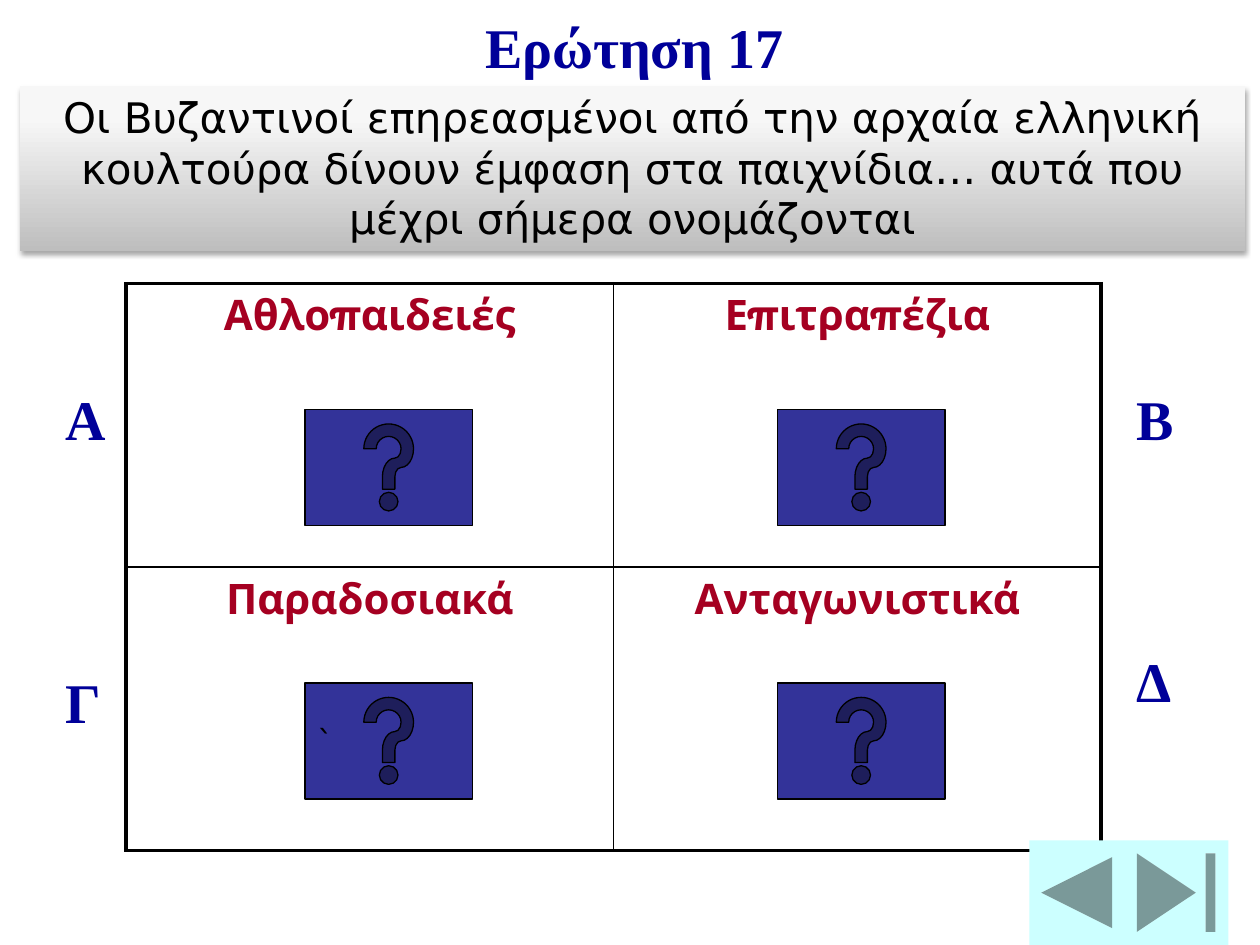
from lxml import etree
from pptx import Presentation
from pptx.dml.color import RGBColor
from pptx.enum.shapes import MSO_SHAPE as Shape
from pptx.enum.text import MSO_ANCHOR as Anchor, PP_ALIGN as Align
from pptx.oxml import parse_xml
from pptx.oxml.ns import nsdecls, qn
from pptx.util import Inches, Pt

COLORS = {
    "heading": "000099", "answer": "A50021", "help": "333399",
    "navigation": "CCFFFF", "ink": "000000", "paper": "FFFFFF",
}
QUESTION_GRADIENT = [(0, "BEBEBE"), (80, "F7F7F7"), (100, "F8F8F8")]
HEADING = "Ερώτηση 17"
QUESTION = (
    "Οι Βυζαντινοί επηρεασμένοι από την αρχαία ελληνική κουλτούρα δίνουν "
    "έμφαση στα παιχνίδια… αυτά που μέχρι σήμερα ονομάζονται"
)
ANSWERS = [["Αθλοπαιδειές", "Επιτραπέζια"], ["Παραδοσιακά", "Ανταγωνιστικά"]]
LETTERS = [("Α", 0.42, 3), ("Β", 8.92, 3), ("Γ", 0.42, 5.25), ("Δ", 8.92, 5.08)]
HELP_LEFTS = [2.42, 6.17]
HELP_TOPS = [3.25, 5.42]
HELP_MARKS = {(0, 1): "`"}
NAVIGATION = [
    (Shape.ACTION_BUTTON_END, 8.92, 0.83),
    (Shape.ACTION_BUTTON_BACK_OR_PREVIOUS, 8.17, 0.75),
]
OUTER, INNER = 2.25, 1


def rgb(name):
    return RGBColor.from_string(COLORS[name])


def write(frame, text, size, font, color, bold=False, align=Align.LEFT):
    paragraph = frame.paragraphs[0]
    paragraph.alignment = align
    paragraph.space_before = Pt(0)
    run = paragraph.add_run()
    run.text = text
    run.font.size = Pt(size)
    run.font.name = font
    run.font.bold = bold
    run.font.color.rgb = rgb(color)


def write_heading(frame, text):
    frame.word_wrap = True
    frame.vertical_anchor = Anchor.TOP
    write(frame, text, 32, "Times New Roman", "heading", bold=True)


def add_button(slide, kind, left, top, width, height, color):
    button = slide.shapes.add_shape(
        kind, Inches(left), Inches(top), Inches(width), Inches(height))
    button.shadow.inherit = False
    button.fill.solid()
    button.fill.fore_color.rgb = rgb(color)
    button.line.fill.background()
    return button


def add_border(cell, side, width):
    properties = cell._tc.get_or_add_tcPr()
    border = etree.SubElement(properties, qn(f"a:ln{side}"), w=str(Pt(width)))
    fill = etree.SubElement(border, qn("a:solidFill"))
    etree.SubElement(fill, qn("a:srgbClr"), val=COLORS["ink"])


def add_answers(slide):
    table = slide.shapes.add_table(
        2, 2, Inches(1), Inches(2.25), Inches(7.74), Inches(4.5)).table
    table.first_row = table.horz_banding = False
    for row, answers in enumerate(ANSWERS):
        for column, answer in enumerate(answers):
            cell = table.cell(row, column)
            edges = {"L": column == 0, "R": column == 1, "T": row == 0, "B": row == 1}
            for side, is_outer in edges.items():
                add_border(cell, side, OUTER if is_outer else INNER)
            cell.fill.solid()
            cell.fill.fore_color.rgb = rgb("paper")
            write(cell.text_frame, answer, 24, "Montserrat", "answer", True, Align.CENTER)


def add_question(slide):
    banner = add_button(slide, Shape.RECTANGLE, 0.16, 0.68, 9.72, 1.31, "paper")
    stops = "".join(
        f'<a:gs pos="{position * 1000}"><a:srgbClr val="{color}"/></a:gs>'
        for position, color in QUESTION_GRADIENT)
    gradient = parse_xml(
        f'<a:gradFill {nsdecls("a")}><a:gsLst>{stops}</a:gsLst>'
        '<a:lin ang="16200000" scaled="0"/></a:gradFill>')
    properties = banner._element.spPr
    properties.replace(properties.find(qn("a:solidFill")), gradient)
    shadow = parse_xml(
        f'<a:outerShdw {nsdecls("a")} blurRad="{Pt(3.1)}" dist="{Pt(1.8)}" '
        f'dir="5400000" rotWithShape="0"><a:srgbClr val="{COLORS["ink"]}">'
        '<a:alpha val="35000"/></a:srgbClr></a:outerShdw>')
    properties.find(qn("a:effectLst")).append(shadow)
    banner.text_frame.word_wrap = True
    banner.text_frame.vertical_anchor = Anchor.TOP
    write(banner.text_frame, QUESTION, 24, "DejaVu Sans", "ink", align=Align.CENTER)


def main():
    deck = Presentation()
    deck.slide_width, deck.slide_height = Inches(10), Inches(7.5)
    slide = deck.slides.add_slide(deck.slide_layouts[5])
    add_answers(slide)

    for letter, left, top in LETTERS:
        label = slide.shapes.add_textbox(
            Inches(left), Inches(top), Inches(0.5), Inches(0.63))
        write_heading(label.text_frame, letter)

    heading = slide.shapes.title
    heading.left, heading.top = Inches(3.75), Inches(0.05)
    heading.width, heading.height = Inches(2.67), Inches(0.64)
    write_heading(heading.text_frame, HEADING)

    for row, top in enumerate(HELP_TOPS):
        for column, left in enumerate(HELP_LEFTS):
            button = add_button(
                slide, Shape.ACTION_BUTTON_HELP, left, top, 1.33, 0.92, "help")
            button.line.color.rgb = rgb("ink")
            button.line.width = Pt(0.75)
            if (column, row) in HELP_MARKS:
                button.text_frame.word_wrap = False
                button.text_frame.vertical_anchor = Anchor.MIDDLE
                write(button.text_frame, HELP_MARKS[column, row], 18, "DejaVu Sans", "ink")

    for kind, left, width in NAVIGATION:
        add_button(slide, kind, left, 6.67, width, 0.83, "navigation")
    add_question(slide)
    deck.save("out.pptx")


if __name__ == "__main__":
    main()
